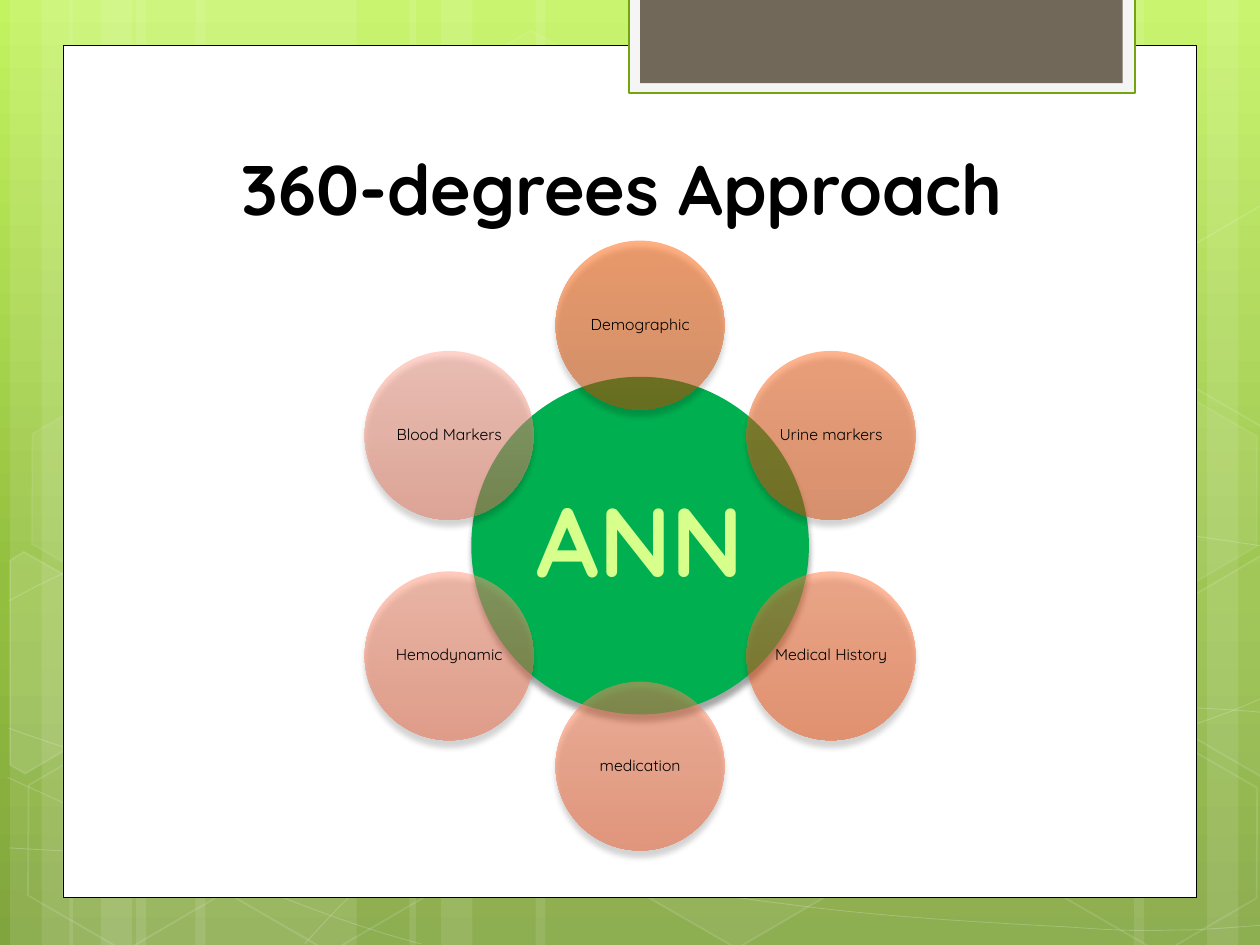
from dataclasses import dataclass
from math import cos, radians, sin
from typing import NamedTuple

from lxml.etree import SubElement
from pptx import Presentation
from pptx.dml.color import RGBColor
from pptx.enum.shapes import MSO_SHAPE
from pptx.enum.text import MSO_ANCHOR, PP_ALIGN
from pptx.oxml.ns import qn
from pptx.util import Inches, Pt

RECT, OVAL, HEX = MSO_SHAPE.RECTANGLE, MSO_SHAPE.OVAL, MSO_SHAPE.HEXAGON
CENTER = PP_ALIGN.CENTER
MIDDLE, BOTTOM = MSO_ANCHOR.MIDDLE, MSO_ANCHOR.BOTTOM
FONT = "Quicksand"
COLORS = {
    "white": "FFFFFF", "black": "000000", "tab": "F5F5F5", "edge": "74A510",
    "brown": "71685A", "hub": "00B050", "lime": "D6FF8C",
}
BACK = [(0, "C3F35F"), (62, "93BF3F"), (100, "81A53E")]


class Cell(NamedTuple):
    """A faint hexagon; fill and line are opacities in percent."""
    left: float
    top: float
    fill: int
    line: int


class Shard(NamedTuple):
    """A hexagon cut off by the slide edge."""
    points: list
    fill: int


@dataclass
class Petal:
    label: str
    light: str
    dark: str


STRIPS = [  # left, width
    (1.08, 1.75), (0.08, 0.5), (0.33, 0.83), (1.55, 1.75), (0.55, 0.5), (0.8, 0.83),
    (7.33, 1.75), (9.58, 0.5), (9, 0.83), (4.25, 3.08), (3.25, 0.5), (3.5, 0.83),
]
WAVES = [  # start point, then three points for each Bezier arc
    [(0.07, 6.73), (0.61, 6.76), (1.15, 6.79), (1.9, 6.78), (2.65, 6.77), (3.58, 6.75),
     (4.58, 6.65), (5.58, 6.55), (7, 6.36), (7.92, 6.17), (8.83, 5.98), (9.77, 5.68),
     (10.07, 5.51)],
    [(0.07, 4.77), (0.36, 4.61), (0.65, 4.46), (1.21, 4.31), (1.78, 4.16), (2.59, 3.94),
     (3.47, 3.87), (4.36, 3.8), (5.44, 3.79), (6.54, 3.87), (7.64, 3.95), (9.47, 4.26),
     (10.07, 4.34)],
    [(0.06, 6.17), (1.27, 6.72), (2.47, 7.27), (3.34, 7.49)],
    [(0.07, 5.78), (0.38, 5.89), (0.7, 6), (1.28, 6.16), (1.86, 6.31), (2.73, 6.56),
     (3.57, 6.73), (4.4, 6.9), (5.45, 7.08), (6.28, 7.18), (7.11, 7.29), (8, 7.33),
     (8.53, 7.36), (9.05, 7.4), (9.19, 7.38), (9.45, 7.38), (9.71, 7.37), (9.89, 7.35),
     (10.07, 7.34)],
    [(2.42, 7.49), (2.6, 7.29), (2.78, 7.09), (3.02, 6.91), (3.26, 6.73), (3.6, 6.53),
     (3.88, 6.39), (4.16, 6.25), (4.33, 6.19), (4.7, 6.09), (5.06, 5.99), (5.73, 5.85),
     (6.08, 5.78), (6.44, 5.71), (6.49, 5.71), (6.8, 5.69), (7.11, 5.66), (7.6, 5.63),
     (7.94, 5.62), (8.29, 5.61), (8.86, 5.62), (8.86, 5.62), (9.08, 5.62), (9.31, 5.62),
     (9.53, 5.62), (9.71, 5.63), (9.88, 5.64), (9.97, 5.65), (10.06, 5.66), (10.03, 5.65),
     (10.06, 5.66)],
]
CELLS = [
    Cell(3.34, 0.36, 4, 8), Cell(4.97, 5.89, 6, 12), Cell(0.11, 5.91, 0, 12),
    Cell(0.14, 3.12, 7, 8), Cell(1.74, 5.92, 0, 12), Cell(7.53, 4.53, 10, 12),
    Cell(8.34, 5.93, 0, 12), Cell(8.34, 3.14, 7, 8),
]
SHARDS = [
    Shard([(0.08, 4.45), (0.19, 4.38), (0.96, 4.82), (0.95, 5.7), (0.2, 6.14), (0.08, 6.07)], 10),
    Shard([(9.26, 4.85), (10.01, 4.41), (10.09, 4.46), (10.09, 6.13), (10.02, 6.17),
           (9.26, 5.73)], 4),
    Shard([(9.26, 2.07), (10.01, 1.63), (10.1, 1.68), (10.09, 3.35), (10.02, 3.39),
           (9.26, 2.95)], 0),
]
PETALS = [  # clockwise from the top
    Petal("Demographic", "FF6105", "CF4C00"), Petal("Urine markers", "FF6B22", "DC4F09"),
    Petal("Medical History", "FF783F", "EE510E"), Petal("medication", "FF865C", "ED5A26"),
    Petal("Hemodynamic", "FF9778", "EA6741"), Petal("Blood Markers", "FFA995", "E6765B"),
]
MID_X, MID_Y, ORBIT = 5.08, 4.33, 1.75


def tint(fill, color: str, alpha: int = 100) -> None:
    """Fill with one colour at an opacity in percent; none at zero."""
    if not alpha:
        fill.background()
        return
    fill.solid()
    fill.fore_color.rgb = RGBColor.from_string(COLORS[color])
    if alpha < 100:
        node = fill._xPr.find(qn("a:solidFill"))[0]
        SubElement(node, qn("a:alpha"), val=str(alpha * 1000))


def blend(fill, root, stops: list, alpha: int = 100) -> None:
    """Fill from top to bottom with gradient stops."""
    fill.gradient()
    fill.gradient_angle = 270
    group = next(root.iter(qn("a:gsLst")))
    group.clear()
    for pos, color in stops:
        stop = SubElement(group, qn("a:gs"), pos=str(pos * 1000))
        node = SubElement(stop, qn("a:srgbClr"), val=color)
        if alpha < 100:
            SubElement(node, qn("a:alpha"), val=str(alpha * 1000))


def style(shape, fill: str = "white", alpha: int = 100, line: str = "white",
          width: float = 0, clear: int = 100) -> None:
    """Set fill and outline; clear is the opacity of the outline."""
    shape.shadow.inherit = False
    tint(shape.fill, fill, alpha)
    tint(shape.line.fill, line, clear if width else 0)
    if width:
        shape.line.width = Pt(width)


def block(slide, kind, left: float, top: float, wide: float, high: float, **look):
    shape = slide.shapes.add_shape(kind, Inches(left), Inches(top), Inches(wide), Inches(high))
    style(shape, **look)
    return shape


def trace(slide, points: list, close: bool, **look):
    """Draw a freeform through points given in inches."""
    spots = [(Inches(x), Inches(y)) for x, y in points]
    pen = slide.shapes.build_freeform(*spots[0])
    pen.add_line_segments(spots[1:], close=close)
    shape = pen.convert_to_shape()
    style(shape, **look)
    return shape


def bend(shape) -> None:
    """Turn each three line segments of a freeform into one Bezier arc."""
    route = next(shape._element.iter(qn("a:path")))
    lines = route.findall(qn("a:lnTo"))
    for i in range(0, len(lines), 3):
        arc = SubElement(route, qn("a:cubicBezTo"))
        for line in lines[i:i + 3]:
            arc.append(line[0])
            route.remove(line)


def write(shape, text: str, size: float, color: str = "black", bold: bool = False,
          anchor=MIDDLE, inset: float = 0.01, space: float = 0.9) -> None:
    frame = shape.text_frame
    frame.word_wrap = True
    frame.vertical_anchor = anchor
    frame.margin_left = frame.margin_right = Inches(inset)
    frame.margin_top = frame.margin_bottom = Inches(inset)
    para = frame.paragraphs[0]
    para.alignment, para.line_spacing = CENTER, space
    run = para.add_run()
    run.text = text
    run.font.name, run.font.size, run.font.bold = FONT, Pt(size), bold
    run.font.color.rgb = RGBColor.from_string(COLORS[color])


def label(slide, x: float, y: float, size: float, text: str, points: float, **look) -> None:
    """Add a square text box around a centre."""
    box = slide.shapes.add_textbox(Inches(x - size / 2), Inches(y - size / 2),
                                   Inches(size), Inches(size))
    write(box, text, points, **look)


def disc(slide, x: float, y: float, size: float):
    """Add a circle around a centre, with a soft shadow below."""
    shape = block(slide, OVAL, x - size / 2, y - size / 2, size, size, fill="hub")
    glow = SubElement(shape._element.spPr.find(qn("a:effectLst")), qn("a:outerShdw"),
                      blurRad=str(Pt(3.5)), dist=str(Pt(4)), dir="5400000", rotWithShape="0")
    node = SubElement(glow, qn("a:srgbClr"), val=COLORS["black"])
    SubElement(node, qn("a:alpha"), val="34000")
    return shape


def scene(slide) -> None:
    """Draw the green backdrop, the white panel and the tab."""
    blend(slide.background.fill, slide.element, BACK)
    for left, wide in STRIPS:
        block(slide, RECT, left, 0, wide, 7.5, alpha=10)
    for knots in WAVES:
        bend(trace(slide, knots, False, alpha=0, width=0.5, clear=20))
    for cell in CELLS:
        shape = block(slide, HEX, cell.left, cell.top, 1.75, 1.52,
                      alpha=cell.fill, width=1, clear=cell.line)
        shape.adjustments[0] = 0.285
        shape.rotation = 30
    for shard in SHARDS:
        trace(slide, shard.points, True, alpha=shard.fill, width=1, clear=12)
    block(slide, RECT, 0.5, 0.36, 9, 6.76, line="black", width=0.5)
    block(slide, RECT, 4.99, -0.02, 4.02, 0.76, fill="tab", line="edge", width=1.25)
    block(slide, RECT, 5.08, -0.02, 3.83, 0.68, fill="brown")


def wheel(slide) -> None:
    """Draw the hub and the petals around it."""
    disc(slide, MID_X, MID_Y, 2.68)
    label(slide, MID_X, MID_Y, 1.9, "ANN", 56, color="lime", bold=True, inset=0.08)
    for i, petal in enumerate(PETALS):
        turn = radians(360 / len(PETALS) * i)
        x, y = MID_X + ORBIT * sin(turn), MID_Y - ORBIT * cos(turn)
        shape = disc(slide, x, y, 1.34)
        blend(shape.fill, shape._element, [(0, petal.light), (100, petal.dark)], 50)
        label(slide, x, y, 0.95, petal.label, 9)


def main() -> None:
    deck = Presentation()
    deck.slide_width, deck.slide_height = Inches(10), Inches(7.5)
    slide = deck.slides.add_slide(deck.slide_layouts[5])
    scene(slide)
    title = slide.shapes.title
    title.left, title.top, title.width, title.height = map(Inches, (1.1, 1.08, 7.68, 0.79))
    write(title, "360-degrees Approach", 40, bold=True, anchor=BOTTOM, inset=0.05, space=1)
    slide.shapes._spTree.append(title._element)  # in front of the panel
    wheel(slide)
    deck.save("out.pptx")


if __name__ == "__main__":
    main()
